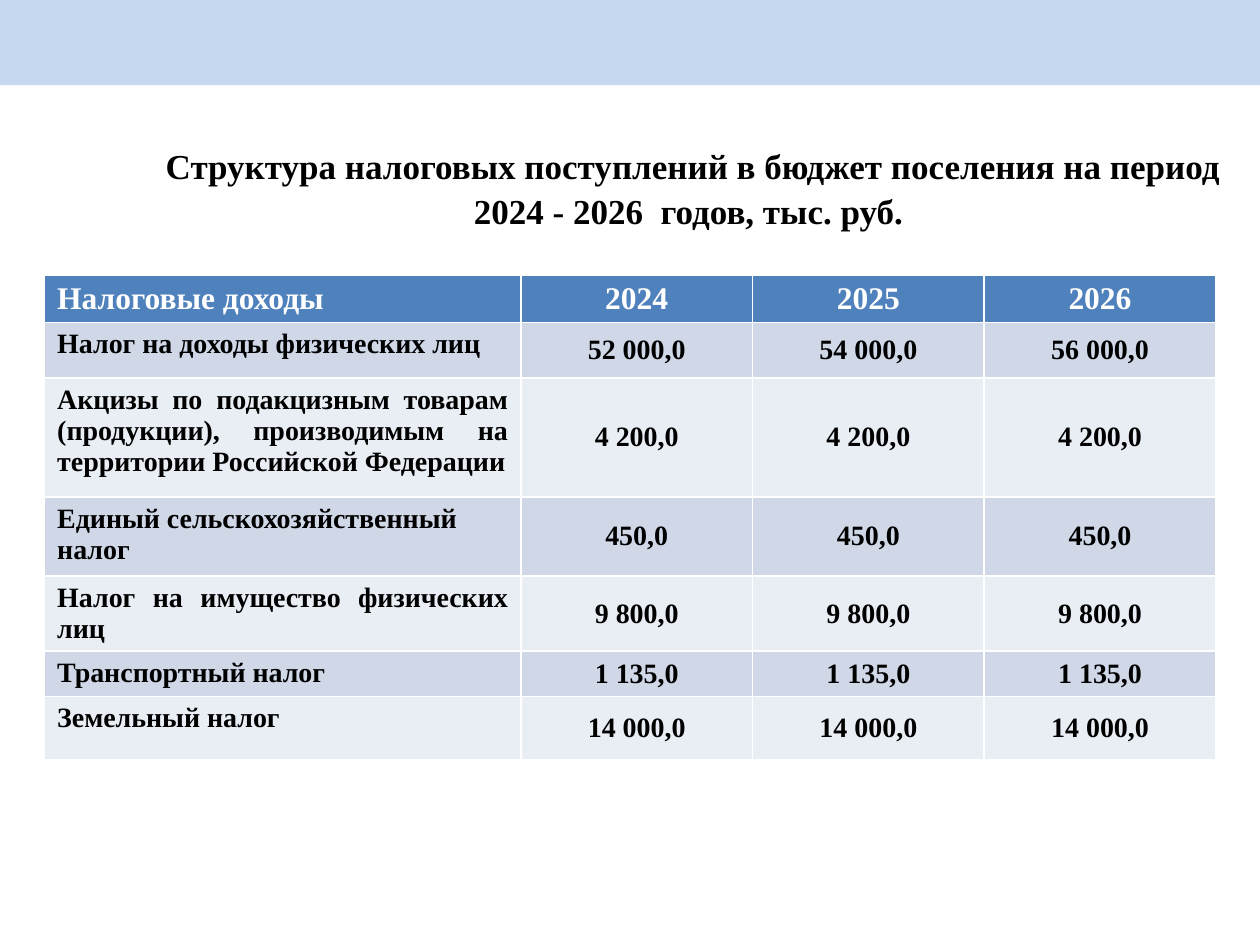
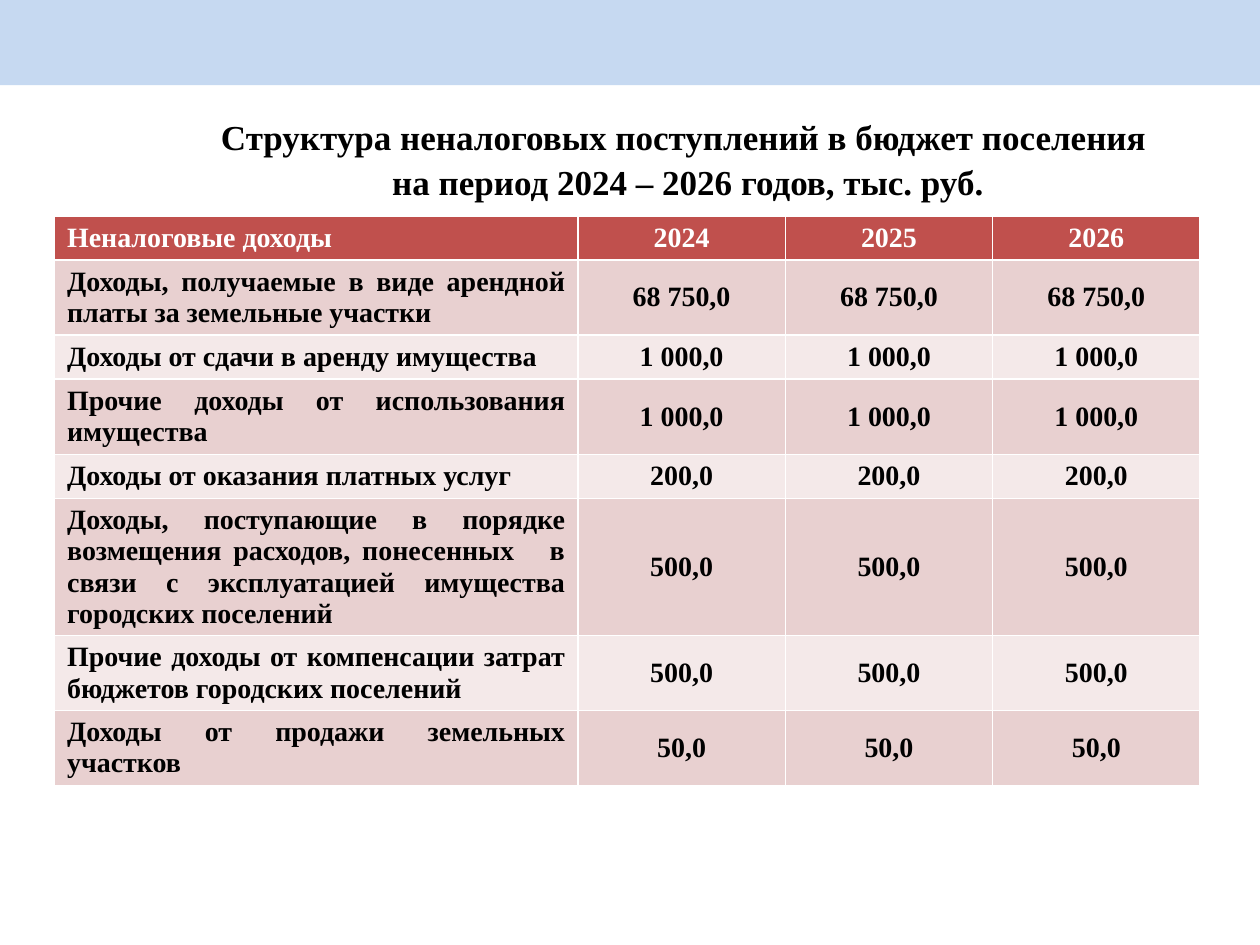
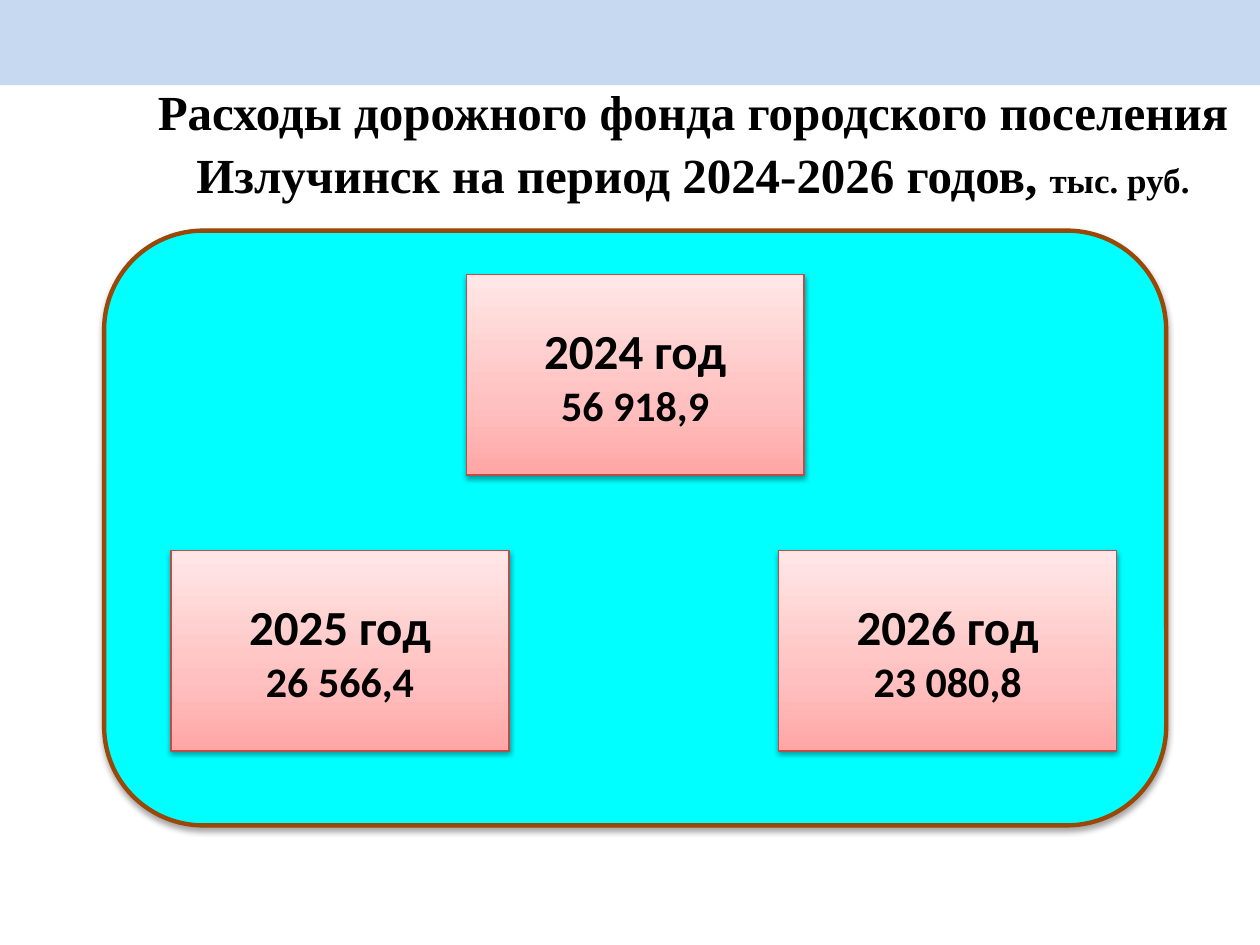
"""Build three budget slides: tax revenue, non-tax revenue and road fund spending."""
from copy import deepcopy

from lxml.etree import SubElement
from pptx import Presentation
from pptx.dml.color import RGBColor
from pptx.enum.shapes import MSO_SHAPE
from pptx.enum.text import MSO_ANCHOR, MSO_AUTO_SIZE, PP_ALIGN
from pptx.oxml.ns import qn
from pptx.util import Cm, Pt

BLACK = RGBColor(0x00, 0x00, 0x00)
WHITE = RGBColor(0xFF, 0xFF, 0xFF)
BAND = RGBColor(0xC6, 0xD9, 0xF1)
CYAN = RGBColor(0x00, 0xFF, 0xFF)
BROWN = RGBColor(0x98, 0x48, 0x07)
RED_LINE = RGBColor(0xBF, 0x4C, 0x48)
BLUE_ROWS = (RGBColor(0x4F, 0x81, 0xBD), RGBColor(0xD0, 0xD8, 0xE8), RGBColor(0xE9, 0xED, 0xF4))
RED_ROWS = (RGBColor(0xC0, 0x50, 0x4D), RGBColor(0xE8, 0xD0, 0xD0), RGBColor(0xF4, 0xE9, 0xE9))
PINK_STOPS = (
    (0, RGBColor(0xFF, 0xA6, 0xA5)),
    (0.35, RGBColor(0xFF, 0xC0, 0xBF)),
    (1, RGBColor(0xFF, 0xE7, 0xE7)),
)
SERIF, SANS = "Times New Roman", "Calibri"
YEARS = ("2024", "2025", "2026")

TAXES = (
    ("Налог на доходы физических лиц", "52 000,0", "54 000,0", "56 000,0"),
    ("Акцизы по подакцизным товарам (продукции), производимым на территории Российской Федерации",
     *["4 200,0"] * 3),
    ("Единый сельскохозяйственный налог", *["450,0"] * 3),
    ("Налог на имущество физических лиц", *["9 800,0"] * 3),
    ("Транспортный налог", *["1 135,0"] * 3),
    ("Земельный налог", *["14 000,0"] * 3),
)
NON_TAXES = (
    ("Доходы, получаемые в виде арендной платы за земельные участки", *["68 750,0"] * 3),
    ("Доходы от сдачи в аренду имущества", *["1 000,0"] * 3),
    ("Прочие доходы от использования имущества", *["1 000,0"] * 3),
    ("Доходы от оказания платных услуг", *["200,0"] * 3),
    ("Доходы, поступающие в порядке возмещения расходов, понесенных   в связи с эксплуатацией "
     "имущества городских поселений", *["500,0"] * 3),
    ("Прочие доходы от компенсации затрат бюджетов городских поселений", *["500,0"] * 3),
    ("Доходы от продажи земельных участков", *["50,0"] * 3),
)
ROAD_FUND = (
    ("2024 год", "56 918,9", 9.4, 5.54),
    ("2026 год", "23 080,8", 15.7, 11.1),
    ("2025 год", "26 566,4", 3.45, 11.1),
)


class Deck:
    def __init__(self):
        self.prs = Presentation()
        self.prs.slide_width, self.prs.slide_height = Cm(25.4), Cm(19.05)
        self.s = None

    def format_font(self, font, size, name=SERIF, color=BLACK):
        for key, value in {"size": Pt(size), "name": name, "bold": True}.items():
            setattr(font, key, value)
        font.color.rgb = color

    def add_slide(self, box, *runs):
        self.s = self.prs.slides.add_slide(self.prs.slide_layouts[5])
        band = self.add_shape(MSO_SHAPE.RECTANGLE, (0, 0, 25.4, 1.72))
        band.fill.solid()
        band.fill.fore_color.rgb = BAND
        band.line.fill.background()
        title = self.s.shapes.title
        title.element.addprevious(band.element)
        for key, value in zip(("left", "top", "width", "height"), box):
            setattr(title, key, Cm(value))
        tf = title.text_frame
        frame = {"auto_size": MSO_AUTO_SIZE.NONE, "word_wrap": True,
                 "vertical_anchor": MSO_ANCHOR.TOP}
        for key, value in frame.items():
            setattr(tf, key, value)
        p = tf.paragraphs[0]
        p.alignment, p.line_spacing = PP_ALIGN.CENTER, 1.08
        for i, (text, size) in enumerate(runs):
            for j, line in enumerate(text.split("\n")):
                if j:
                    p.add_line_break()
                r = p.add_run()
                r.text = line
                self.format_font(r.font, size)

    def add_shape(self, kind, box):
        sp = self.s.shapes.add_shape(kind, *[Cm(v) for v in box])
        sp.shadow.inherit = False
        return sp

    def add_shadow(self, sp, distance, opacity):
        effects = sp.element.spPr.find(qn("a:effectLst"))
        shadow = SubElement(effects, qn("a:outerShdw"), blurRad="40000", dist=str(distance),
                            dir="5400000", rotWithShape="0")
        color = SubElement(shadow, qn("a:srgbClr"), val="000000")
        SubElement(color, qn("a:alpha"), val=str(opacity * 1000))

    def add_panel(self, box):
        sp = self.add_shape(MSO_SHAPE.ROUNDED_RECTANGLE, box)
        sp.fill.solid()
        sp.fill.fore_color.rgb = CYAN
        sp.line.color.rgb, sp.line.width = BROWN, Pt(2.5)
        self.add_shadow(sp, 23000, 35)

    def add_card(self, year, amount, left, top):
        sp = self.add_shape(MSO_SHAPE.RECTANGLE, (left, top, 6.81, 4.04))
        sp.fill.gradient()
        sp.fill.gradient_angle = 90
        stops = sp.element.spPr.find(qn("a:gradFill")).find(qn("a:gsLst"))
        stops.append(deepcopy(stops[0]))
        for stop, (position, color) in zip(sp.fill.gradient_stops, PINK_STOPS):
            stop.position, stop.color.rgb = position, color
        sp.line.color.rgb, sp.line.width = RED_LINE, Pt(0.75)
        self.add_shadow(sp, 20000, 38)
        tf = sp.text_frame
        tf.text = f"{year}\n{amount}"
        tf.vertical_anchor = MSO_ANCHOR.MIDDLE
        for p, size in zip(tf.paragraphs, (28, 24)):
            p.alignment = PP_ALIGN.CENTER
            self.format_font(p.runs[0].font, size, SANS)

    def add_table(self, left, top, widths, heights, heading, rows, fills, head_size, left_rows=()):
        data = ((heading, *YEARS), *rows)
        box = (left, top, sum(widths), sum(heights))
        table = self.s.shapes.add_table(len(data), len(widths), *[Cm(v) for v in box]).table
        for column, width in zip(table.columns, widths):
            column.width = Cm(width)
        for i, (values, height) in enumerate(zip(data, heights)):
            table.rows[i].height = Cm(height)
            fill = fills[0] if i == 0 else fills[2 - i % 2]
            label_align = PP_ALIGN.LEFT if i == 0 or i in left_rows else PP_ALIGN.JUSTIFY
            for j, value in enumerate(values):
                cell = table.cell(i, j)
                cell.text = value
                cell.fill.solid()
                cell.fill.fore_color.rgb = fill
                cell.vertical_anchor = MSO_ANCHOR.MIDDLE if j else MSO_ANCHOR.TOP
                p = cell.text_frame.paragraphs[0]
                p.alignment = PP_ALIGN.CENTER if j else label_align
                self.format_font(p.runs[0].font, 16 if i else head_size,
                                 color=BLACK if i else WHITE)


def main():
    deck = Deck()
    deck.add_slide((2.54, 2.72, 22.86, 0.79), (
        "Структура налоговых поступлений в бюджет поселения на период "
        "2024 - 2026  годов, тыс. руб. ", 20))
    deck.add_table(0.9, 5.54, (9.6, *[4.67] * 3), (0.93, 1.12, 2.4, 1.59, 1.52, 0.91, 1.27),
                   "Налоговые доходы", TAXES, BLUE_ROWS, 18, left_rows=(1, 3))

    deck.add_slide((2.44, 2.13, 22.86, 2.21), (
        "Структура неналоговых поступлений в бюджет поселения \n"
        "на период 2024 – 2026 годов, тыс. руб.", 20))
    deck.add_table(1.1, 4.36, (10.55, *[4.18] * 3),
                   (0.86, 1.5, 0.89, 1.52, 0.89, 2.76, 1.5, 1.5),
                   "Неналоговые доходы", NON_TAXES, RED_ROWS, 16)

    deck.add_slide((2.54, 1.42, 22.86, 3.18), (
        "Расходы дорожного фонда городского поселения Излучинск на период 2024-2026 годов, ", 28),
        ("тыс. руб.", 20))
    deck.add_panel((2.1, 4.65, 21.41, 11.99))
    for card in ROAD_FUND:
        deck.add_card(*card)

    deck.prs.save("out.pptx")


if __name__ == "__main__":
    main()
